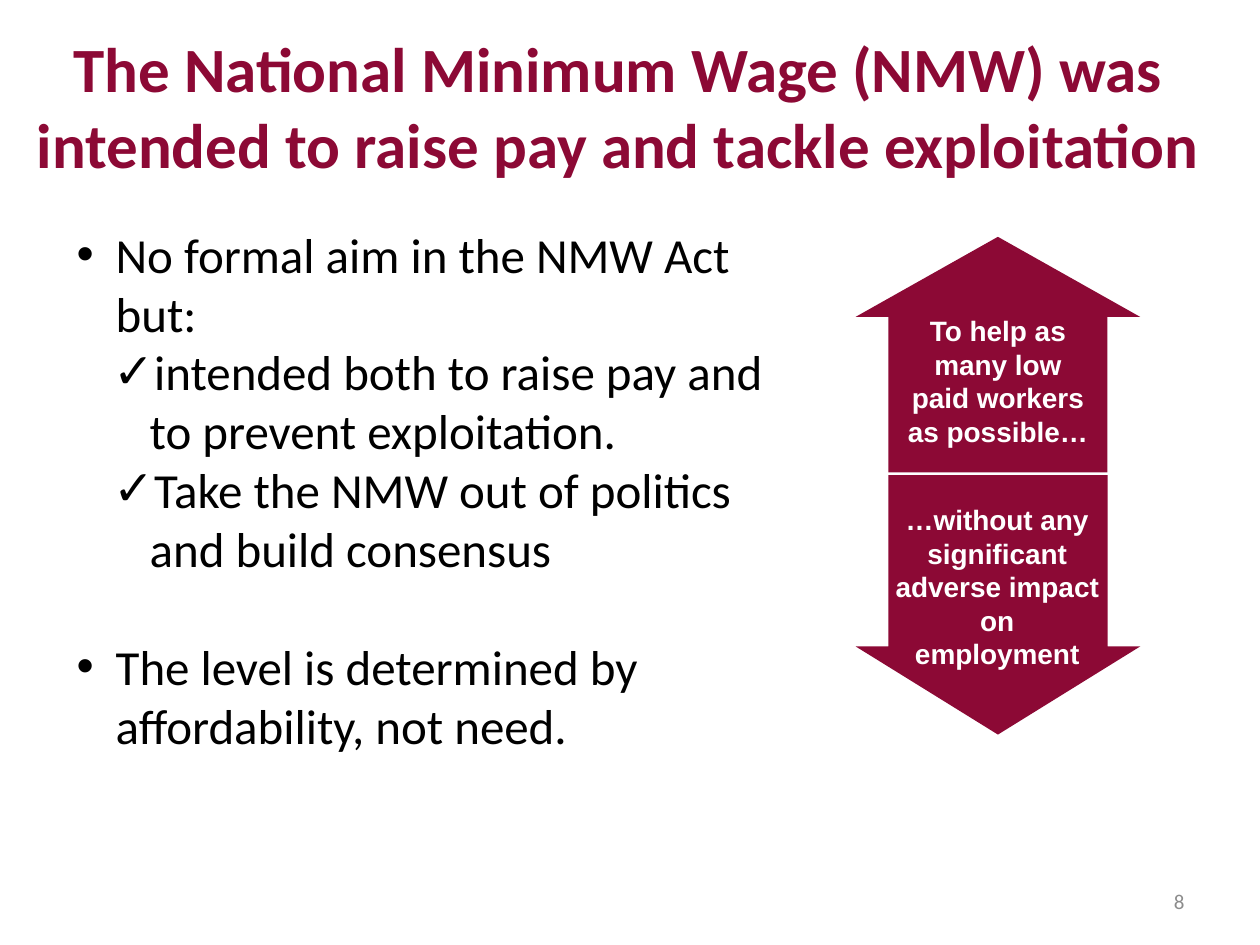
from dataclasses import dataclass

from lxml.etree import SubElement
from pptx import Presentation
from pptx.dml.color import RGBColor
from pptx.enum.shapes import MSO_SHAPE as Shape
from pptx.enum.text import MSO_ANCHOR as Anchor, PP_ALIGN as Align
from pptx.oxml.ns import qn
from pptx.util import Inches, Pt

BURGUNDY = RGBColor(0x8C, 0x09, 0x35)
WHITE = RGBColor(0xFF, 0xFF, 0xFF)
BLACK = RGBColor(0, 0, 0)
GREY = RGBColor(0x8C, 0x8C, 0x8C)


@dataclass(frozen=True)
class Box:
    left: float
    top: float
    width: float
    height: float

    def lengths(self) -> list:
        return [Inches(v) for v in (self.left, self.top, self.width, self.height)]


@dataclass(frozen=True)
class Style:
    size: float
    color: RGBColor
    name: str = "Calibri"
    bold: bool = False
    align: Align = Align.LEFT
    anchor: Anchor = Anchor.TOP


@dataclass(frozen=True)
class Line:
    text: str
    bullet: str = ""
    margin: float = 0
    hanging: float = 0
    space_before: float = 0


@dataclass(frozen=True)
class Arrow:
    box: Box
    rotation: float
    label_box: Box
    label: str


TITLE = Style(36, BURGUNDY, bold=True, align=Align.CENTER, anchor=Anchor.MIDDLE)
BODY = Style(28, BLACK)
LABEL = Style(16, WHITE, "Arial", True, Align.CENTER)
NUMBER = Style(12, GREY, align=Align.RIGHT, anchor=Anchor.MIDDLE)

DOT = {"bullet": "•", "margin": 0.31, "hanging": 0.31}
TICK = {"bullet": "✓", "margin": 0.58, "hanging": 0.29}
AIMS = [
    Line("No formal aim in the NMW Act but:", **DOT),
    Line("intended both to raise pay and to prevent exploitation.", **TICK),
    Line("Take the NMW out of politics and build consensus", **TICK),
    Line("The level is determined by affordability, not need.", space_before=34, **DOT),
]
ARROWS = [
    Arrow(Box(6.79, 1.88, 2.26, 1.87), 0, Box(7.06, 2.44, 1.72, 1.18),
          "To help as many low paid workers as possible…"),
    Arrow(Box(6.79, 3.77, 2.26, 2.06), 180, Box(7, 3.94, 1.83, 1.45),
          "…without any significant adverse impact on employment"),
]


def add_bullet(paragraph, line: Line) -> None:
    properties = paragraph._p.get_or_add_pPr()
    properties.set("marL", str(Inches(line.margin)))
    properties.set("indent", str(-Inches(line.hanging)))
    SubElement(properties, qn("a:buFont")).set("typeface", "Arial")
    SubElement(properties, qn("a:buChar")).set("char", line.bullet)


def add_text(slide, box: Box, lines: list[Line], style: Style) -> None:
    frame = slide.shapes.add_textbox(*box.lengths()).text_frame
    frame.word_wrap = True
    frame.vertical_anchor = style.anchor
    font_values = {"name": style.name, "size": Pt(style.size), "bold": style.bold}
    for index, line in enumerate(lines):
        paragraph = frame.add_paragraph() if index else frame.paragraphs[0]
        paragraph.alignment = style.align
        paragraph.space_before = Pt(line.space_before)
        if line.bullet:
            add_bullet(paragraph, line)
        run = paragraph.add_run()
        run.text = line.text
        for attribute, value in font_values.items():
            setattr(run.font, attribute, value)
        run.font.color.rgb = style.color


def add_arrow(slide, arrow: Arrow) -> None:
    shape = slide.shapes.add_shape(Shape.UP_ARROW, *arrow.box.lengths())
    shape.adjustments[0], shape.adjustments[1] = 0.77, 0.34
    shape.rotation = arrow.rotation
    shape.shadow.inherit = False
    shape.fill.solid()
    shape.fill.fore_color.rgb = BURGUNDY
    shape.line.fill.background()
    add_text(slide, arrow.label_box, [Line(arrow.label)], LABEL)


def main() -> None:
    """Build the slide on the aims of the National Minimum Wage."""
    presentation = Presentation()
    presentation.slide_width, presentation.slide_height = Inches(10), Inches(7.5)
    slide = presentation.slides.add_slide(presentation.slide_layouts[6])
    title = "The National Minimum Wage (NMW) was intended to raise pay and tackle exploitation"
    add_text(slide, Box(0.08, 0.21, 9.65, 1.25), [Line(title)], TITLE)
    for arrow in ARROWS:
        add_arrow(slide, arrow)
    add_text(slide, Box(0.51, 1.73, 5.91, 4.81), AIMS, BODY)
    add_text(slide, Box(7.17, 6.95, 2.33, 0.4), [Line("8")], NUMBER)
    presentation.save("out.pptx")


if __name__ == "__main__":
    main()
